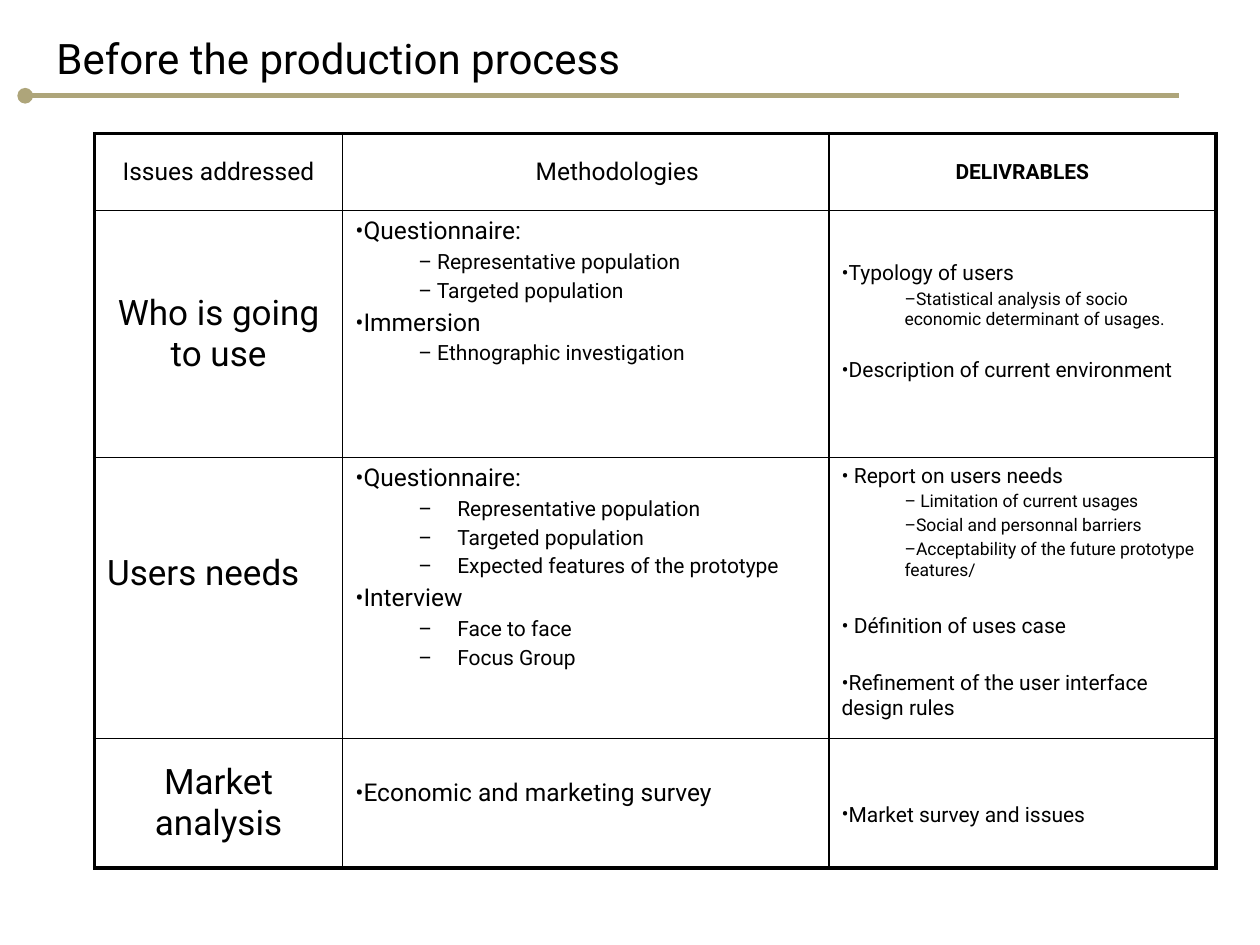
from lxml import etree
from pptx import Presentation
from pptx.dml.color import RGBColor
from pptx.enum import shapes, text
from pptx.oxml import ns
from pptx.util import Inches, Pt

FONT, BLACK, GOLD = "Roboto", "000000", "AEA57A"
TITLE = "Before the production process"
COLUMNS = [1.97, 3.86, 3.07]
ROWS = [0.61, 1.96, 2.23, 1.03]
THIN, THICK = 1, 2.25

# Paragraph formats
HEAD = dict(size=14, align="CENTER")
METHODS_HEAD = dict(HEAD, left=0.5)
BOLD_HEAD = dict(size=12, align="CENTER", bold=True)
ISSUE = dict(size=20, align="CENTER")
ISSUE_LEFT = dict(size=20)
METHOD = dict(size=14, bullet="•")
STEP = dict(size=12, bullet="–", left=0.5)
HANGING_STEP = dict(STEP, left=0.81, hanging=0.31)
RESULT = dict(size=12, bullet="•")
DETAIL = dict(size=10, bullet="–", left=0.5)

# Each cell: anchor, top margin, bottom margin, paragraphs
CELLS = [
    [
        ("MIDDLE", 0.05, 0.05, [("Issues addressed", HEAD)]),
        ("MIDDLE", 0.05, 0.05, [("Methodologies", METHODS_HEAD)]),
        ("MIDDLE", 0.05, 0.05, [("DELIVRABLES", BOLD_HEAD)]),
    ],
    [
        ("MIDDLE", 0.05, 0.05, [("Who is going to use", ISSUE)]),
        ("TOP", 0.05, 0.05, [
            ("Questionnaire:", METHOD),
            (" Representative population", STEP),
            (" Targeted population", STEP),
            ("Immersion", METHOD),
            (" Ethnographic investigation", STEP),
        ]),
        ("MIDDLE", 0.05, 0.24, [
            ("Typology of users", RESULT),
            ("Statistical analysis of socio economic determinant of usages.", DETAIL),
            ("Description of current environment", dict(RESULT, before=16)),
        ]),
    ],
    [
        ("MIDDLE", 0.05, 0.43, [("Users needs", ISSUE_LEFT)]),
        ("TOP", 0.05, 0.05, [
            ("Questionnaire:", METHOD),
            ("Representative population", HANGING_STEP),
            ("Targeted population", HANGING_STEP),
            ("Expected features of the prototype", HANGING_STEP),
            ("Interview", METHOD),
            ("Face to face", HANGING_STEP),
            ("Focus Group", HANGING_STEP),
        ]),
        ("TOP", 0.05, 0.05, [
            (" Report on users needs", RESULT),
            (" Limitation of current usages", DETAIL),
            ("Social and personnal barriers", DETAIL),
            ("Acceptability of the future prototype features/", DETAIL),
            (" Définition of uses case", dict(RESULT, before=19)),
            ("Refinement of the user interface design rules", dict(RESULT, before=19)),
        ]),
    ],
    [
        ("MIDDLE", 0.05, 0.05, [("Market analysis", ISSUE)]),
        ("TOP", 0.32, 0.05, [("Economic and marketing survey", METHOD)]),
        ("TOP", 0.51, 0.05, [("Market survey and issues", RESULT)]),
    ],
]


def color(value):
    return RGBColor.from_string(value)


def write(frame, content, *, size, align="LEFT", bold=False, bullet=None,
          left=0, hanging=0, before=None, first=False):
    paragraph = frame.paragraphs[0] if first else frame.add_paragraph()
    properties = paragraph._p.get_or_add_pPr()
    properties.set("marL", str(Inches(left)))
    properties.set("indent", str(-Inches(hanging)))
    if bullet:
        etree.SubElement(properties, ns.qn("a:buFont")).set("typeface", FONT)
        etree.SubElement(properties, ns.qn("a:buChar")).set("char", bullet)
    paragraph.level = 1 if left else 0
    paragraph.alignment = getattr(text.PP_ALIGN, align)
    if not first:
        paragraph.space_before = Pt(before or 0.2 * size)
    run = paragraph.add_run()
    run.text = content
    run.font.name, run.font.size, run.font.bold = FONT, Pt(size), bold
    run.font.color.rgb = color(BLACK)


def set_borders(cell, widths):
    properties = cell._tc.get_or_add_tcPr()
    for position, (side, width) in enumerate(widths.items()):
        border = etree.Element(ns.qn(f"a:ln{side}"), w=str(Pt(width)))
        fill = etree.SubElement(border, ns.qn("a:solidFill"))
        etree.SubElement(fill, ns.qn("a:srgbClr")).set("val", BLACK)
        properties.insert(position, border)


def add_title(slide):
    box = slide.shapes.add_textbox(Inches(0.35), Inches(0), Inches(8.83), Inches(0.91))
    frame = box.text_frame
    frame.word_wrap = True
    frame.vertical_anchor = text.MSO_ANCHOR.MIDDLE
    write(frame, TITLE, size=24, first=True)


def add_rule(slide):
    rule = slide.shapes.add_connector(
        shapes.MSO_CONNECTOR.STRAIGHT, Inches(0.2), Inches(0.76), Inches(9.36), Inches(0.76))
    rule.line.color.rgb = color(GOLD)
    rule.line.width = Pt(3)
    etree.SubElement(rule.line._get_or_add_ln(), ns.qn("a:headEnd")).set("type", "oval")
    etree.SubElement(rule._element.spPr, ns.qn("a:effectLst"))


def add_grid(slide):
    table = slide.shapes.add_table(
        len(ROWS), len(COLUMNS), Inches(0.75), Inches(1.06),
        Inches(sum(COLUMNS)), Inches(sum(ROWS))).table
    table.first_row = table.horz_banding = False
    for column, width in zip(table.columns, COLUMNS):
        column.width = Inches(width)
    for row, height in zip(table.rows, ROWS):
        row.height = Inches(height)
    last_row, last_column = len(ROWS) - 1, len(COLUMNS) - 1
    for r, row in enumerate(CELLS):
        for c, (anchor, top, bottom, paragraphs) in enumerate(row):
            cell = table.cell(r, c)
            cell.fill.background()
            cell.vertical_anchor = getattr(text.MSO_ANCHOR, anchor)
            cell.margin_left = cell.margin_right = Inches(0.1)
            cell.margin_top, cell.margin_bottom = Inches(top), Inches(bottom)
            # Heavy outer frame, thin inner lines
            outer = {"L": c == 0, "R": c == last_column, "T": r == 0, "B": r == last_row}
            set_borders(cell, {side: THICK if edge else THIN for side, edge in outer.items()})
            for index, (content, style) in enumerate(paragraphs):
                write(cell.text_frame, content, first=index == 0, **style)


def main():
    presentation = Presentation()
    presentation.slide_width, presentation.slide_height = Inches(10), Inches(7.5)
    slide = presentation.slides.add_slide(presentation.slide_layouts[6])
    add_rule(slide)
    add_title(slide)
    add_grid(slide)
    presentation.save("out.pptx")


if __name__ == "__main__":
    main()
